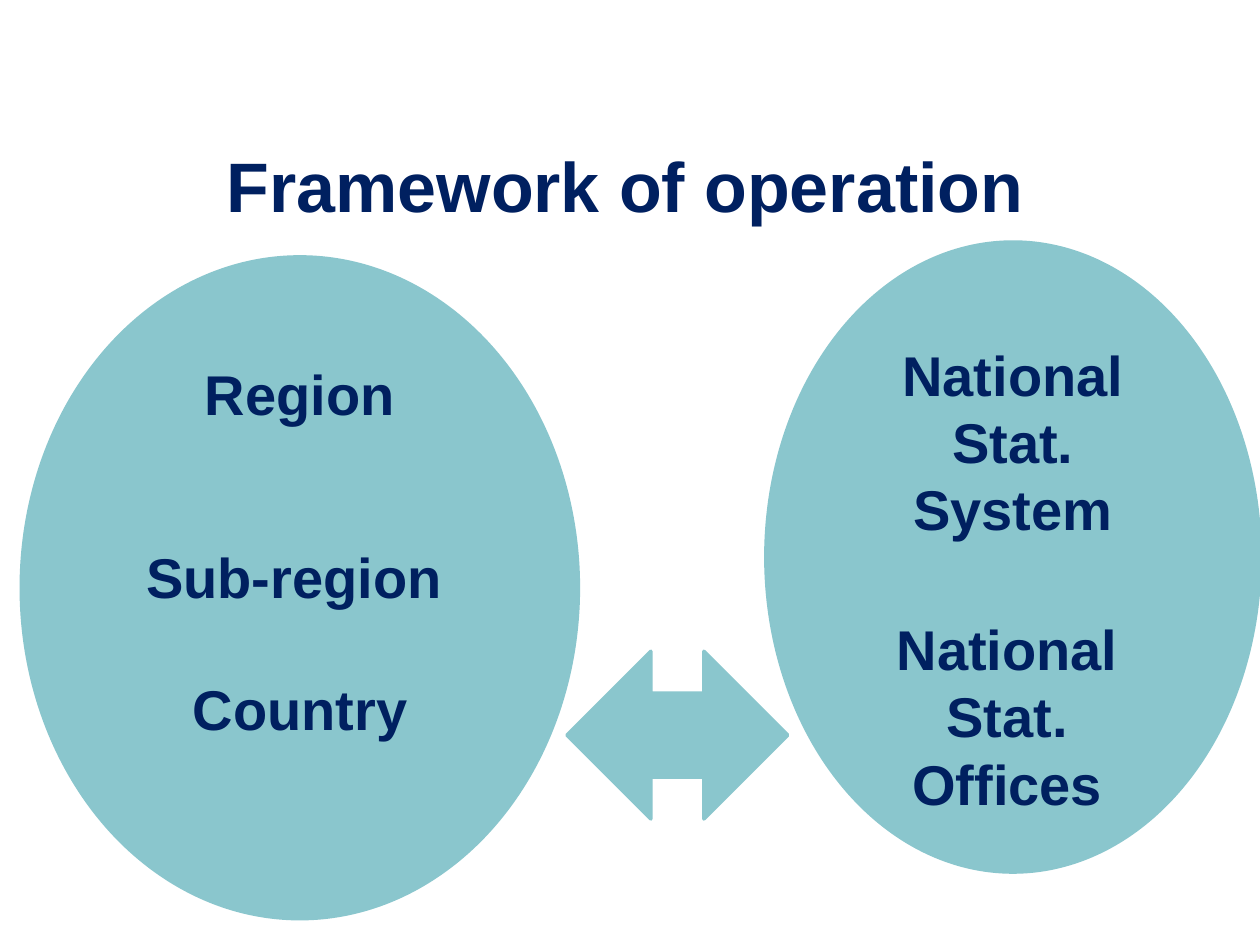
from pptx import Presentation
from pptx.dml.color import RGBColor
from pptx.enum.shapes import MSO_SHAPE
from pptx.enum.text import MSO_ANCHOR, PP_ALIGN
from pptx.util import Cm, Pt

NAVY = "002060"
TEAL = "8AC6CD"


def color(hex_string):
    """Return the colour for a hex string."""
    return RGBColor.from_string(hex_string)


def write_text(shape, text, size=32, bold=True, font_color=NAVY, anchor=MSO_ANCHOR.TOP):
    """Put one centred paragraph into a shape."""
    frame = shape.text_frame
    frame.word_wrap = True
    frame.vertical_anchor = anchor
    paragraph = frame.paragraphs[0]
    paragraph.text = text
    paragraph.alignment = PP_ALIGN.CENTER
    font = paragraph.font
    font.name = "Arial"
    font.size = Pt(size)
    font.bold = bold
    font.color.rgb = color(font_color)


def add_teal_shape(slide, kind, left, top, width, height):
    """Add a flat teal preset shape, placed in centimetres."""
    shape = slide.shapes.add_shape(kind, Cm(left), Cm(top), Cm(width), Cm(height))
    shape.shadow.inherit = False
    shape.fill.solid()
    shape.fill.fore_color.rgb = color(TEAL)
    shape.line.color.rgb = color(TEAL)
    shape.line.width = Pt(2)
    return shape


def place_title(slide, text, left, top, width, height):
    """Move and format the title placeholder."""
    title = slide.shapes.title
    title.left, title.top = Cm(left), Cm(top)
    title.width, title.height = Cm(width), Cm(height)
    write_text(title, text, size=40, anchor=MSO_ANCHOR.MIDDLE)


def add_nested_ellipses(slide, left, top, width, height, label, inner_levels):
    """Add a labelled ellipse and the ellipses offset inside it."""
    levels = [(label, 0, 0, width, height), *inner_levels]
    for text, offset_x, offset_y, level_width, level_height in levels:
        ellipse = add_teal_shape(
            slide, MSO_SHAPE.OVAL, left + offset_x, top + offset_y, level_width, level_height
        )
        write_text(ellipse, text)


def main():
    """Build the slide and save it."""
    presentation = Presentation()
    presentation.slide_width = Cm(25.4)
    presentation.slide_height = Cm(19.05)
    slide = presentation.slides.add_slide(presentation.slide_layouts[5])

    place_title(slide, "Framework of operation", 2.54, 2.74, 20.12, 1.96)
    add_nested_ellipses(
        slide, 15.44, 4.88, 9.96, 12.7, "National Stat. System",
        [("National Stat. Offices", 1.27, 6.55, 7.19, 5.72)],
    )
    add_nested_ellipses(
        slide, 0.43, 5.18, 11.23, 13.34, "Region",
        [
            ("Sub-region", 0.84, 4.35, 9.32, 8.69),
            ("Country", 1.91, 7.52, 7.42, 5.28),
        ],
    )
    add_teal_shape(slide, MSO_SHAPE.LEFT_RIGHT_ARROW, 11.43, 13.13, 4.45, 3.38)

    presentation.save("out.pptx")


if __name__ == "__main__":
    main()
